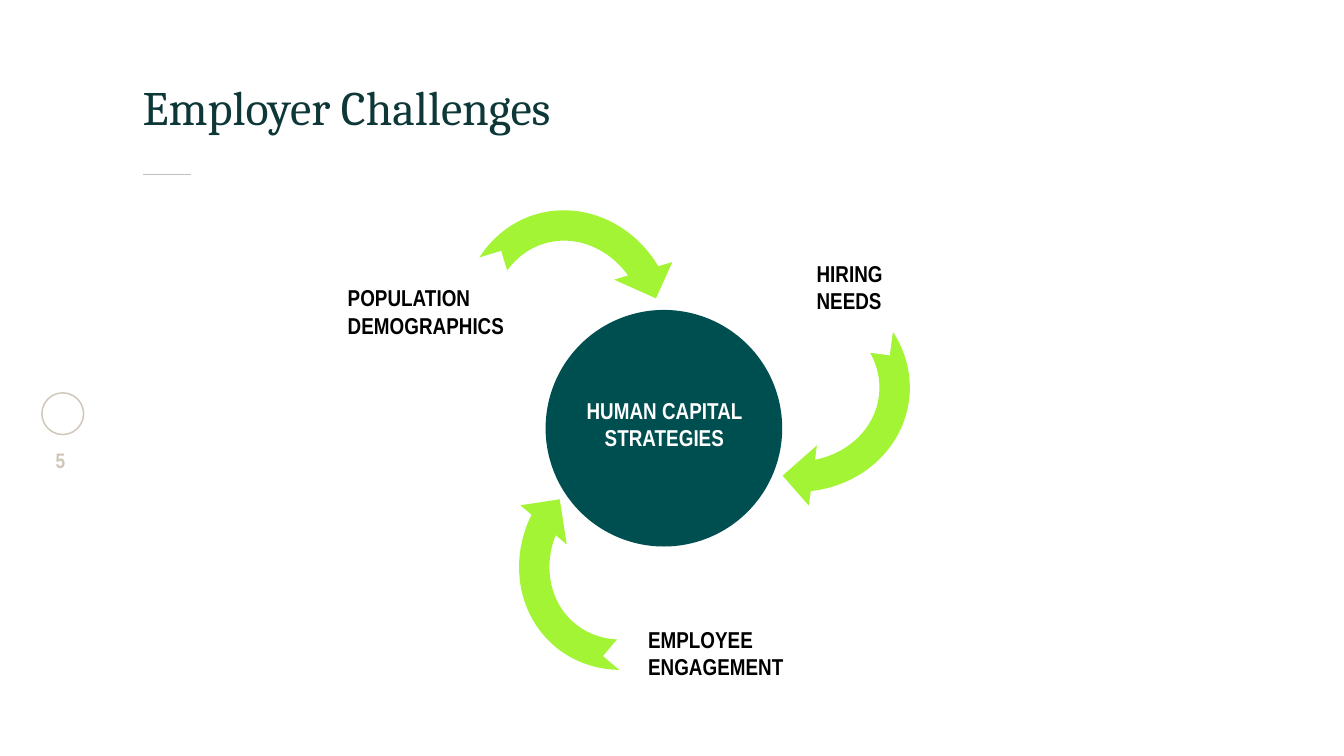
from lxml import etree
from pptx import Presentation
from pptx.dml.color import RGBColor
from pptx.enum.shapes import MSO_CONNECTOR, MSO_SHAPE
from pptx.enum.text import MSO_ANCHOR, PP_ALIGN
from pptx.oxml.ns import qn
from pptx.util import Pt

ELLIPSE = MSO_SHAPE.OVAL
RECTANGLE = MSO_SHAPE.RECTANGLE
ARROW = MSO_SHAPE.CIRCULAR_ARROW
STRAIGHT = MSO_CONNECTOR.STRAIGHT
LEFT, CENTER = PP_ALIGN.LEFT, PP_ALIGN.CENTER
TOP, BOTTOM = MSO_ANCHOR.TOP, MSO_ANCHOR.BOTTOM

WHITE, BLACK = "FFFFFF", "000000"
LIME, TEAL, DARK = "A2F434", "004F50", "0E3837"
SAND, GRAY = "CFC7BA", "BFBFBF"


def color(value):
    return RGBColor.from_string(value)


class Painter:
    """Holds the text style and the current slide."""

    heading = {"name": "Cambria", "size": Pt(32), "bold": False}
    label = {"name": "Arial Narrow", "size": Pt(15.3), "bold": True}
    number = {"name": "Arial Narrow", "size": Pt(14), "bold": True}

    def __init__(self, page):
        self.page = page

    def shape(self, kind, place, fill=None, outline=None, rotation=0):
        shape = self.page.shapes.add_shape(kind, *map(Pt, place))
        shape.shadow.inherit = False
        shape.rotation = rotation
        if fill:
            shape.fill.solid()
            shape.fill.fore_color.rgb = color(fill)
        else:
            shape.fill.background()
        if outline:
            shape.line.color.rgb = color(outline)
            shape.line.width = Pt(1)
        else:
            shape.line.fill.background()

    def rule(self, left, right, top, tint):
        line = self.page.shapes.add_connector(
            STRAIGHT, Pt(left), Pt(top), Pt(right), Pt(top))
        line.line.color.rgb = color(tint)
        line.line.width = Pt(0.75)
        etree.SubElement(line._element.spPr, qn("a:effectLst"))

    def text(self, lines, place, style, tint, align=LEFT, anchor=TOP,
             insets=(0, 0)):
        box = self.page.shapes.add_textbox(*map(Pt, place))
        frame = box.text_frame
        side, edge = map(Pt, insets)
        settings = {"word_wrap": True, "vertical_anchor": anchor,
                    "margin_left": side, "margin_right": side,
                    "margin_top": edge, "margin_bottom": edge}
        for key, value in settings.items():
            setattr(frame, key, value)
        for index, line in enumerate(lines):
            para = frame.add_paragraph() if index else frame.paragraphs[0]
            para.alignment = align
            span = para.add_run()
            span.text = line
            for key, value in style.items():
                setattr(span.font, key, value)
            span.font.color.rgb = color(tint)


def main():
    deck = Presentation()
    deck.slide_width, deck.slide_height = Pt(895.68), Pt(504)
    painter = Painter(deck.slides.add_slide(deck.slide_layouts[6]))

    # Side mark and page number
    painter.shape(ELLIPSE, (27.9, 261.9, 27.8, 27.8), outline=SAND)
    painter.text(["5"], (25.2, 298.08, 30.24, 27.36), painter.number, SAND,
                 align=CENTER)

    # Title with its short rule
    painter.text(["Employer Challenges"], (95.04, 36, 740.16, 54),
                 painter.heading, DARK, anchor=BOTTOM)
    painter.rule(95.04, 127.44, 116.64, GRAY)

    # Circular arrows, each with white masks that notch its tail
    arrow_size, mask_size = (162, 174), (124.56, 83.52)
    cycle = [
        ((448.56, 169.92), 97.6, (474.48, 145.44)),
        ((338.4, 285.12), 220.3, (411.84, 375.12)),
        ((298.08, 129.6), 343.1, (249.84, 197.28)),
    ]
    for arrow, turn, mask in cycle:
        painter.shape(ARROW, arrow + arrow_size, LIME, rotation=turn)
        painter.shape(RECTANGLE, mask + mask_size, WHITE,
                      rotation=(turn + 90) % 360)
    painter.shape(RECTANGLE, (536.4, 138.96, 83.52, 83.52), WHITE,
                  rotation=228.2)

    # Hub
    painter.shape(ELLIPSE, (363.6, 206.64, 157.68, 157.68), TEAL)

    # Labels
    labels = [
        (["HUMAN CAPITAL STRATEGIES"], (363.6, 260.64, 158.4), WHITE, CENTER),
        (["EMPLOYEE ENGAGEMENT"], (424.8, 413.28, 169.2), BLACK, LEFT),
        (["HIRING NEEDS"], (537.12, 169.2, 90), BLACK, LEFT),
        (["POPULATION", "DEMOGRAPHICS"], (224.64, 185.76, 140.4), BLACK, LEFT),
    ]
    for lines, place, tint, align in labels:
        painter.text(lines, place + (44.64,), painter.label, tint,
                     align=align, insets=(7.2, 3.6))

    deck.save("out.pptx")


if __name__ == "__main__":
    main()
